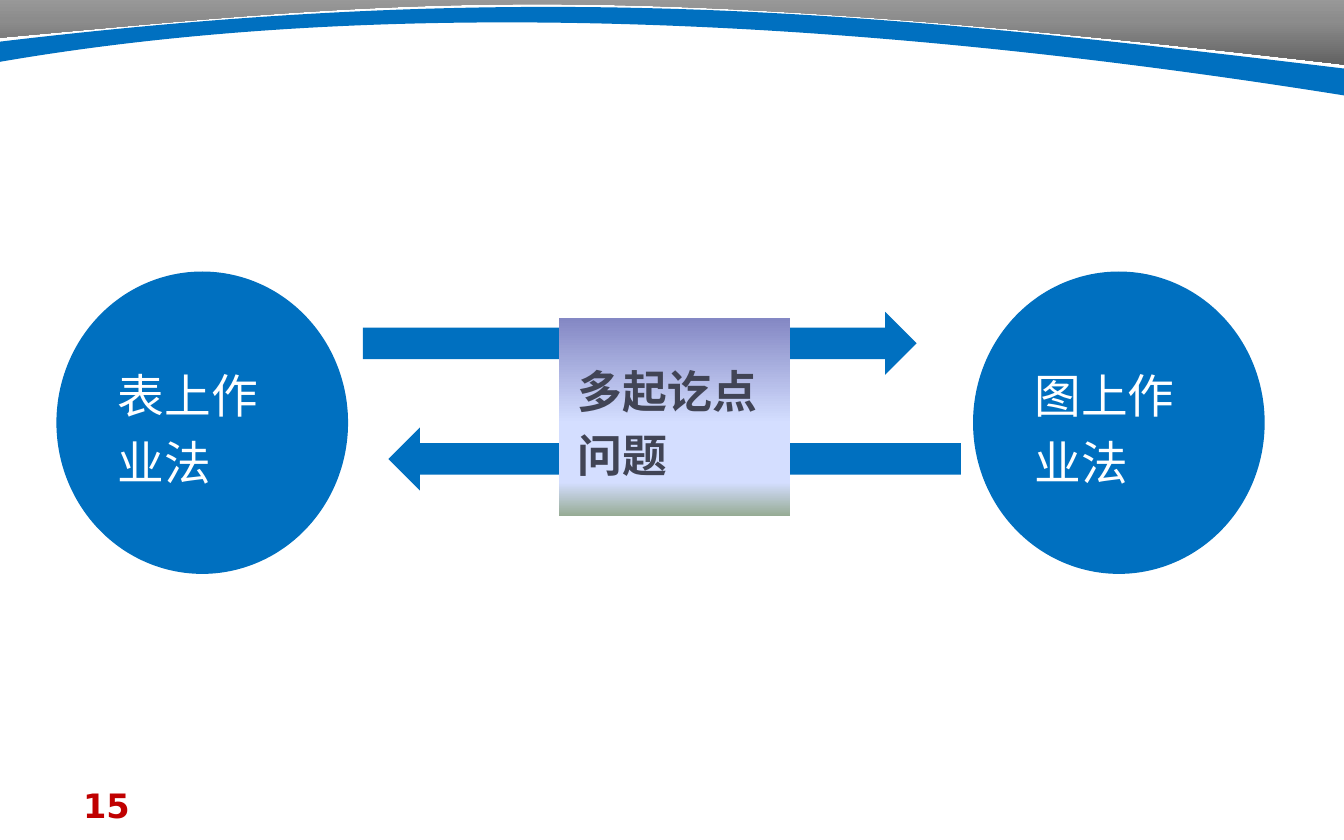
from lxml.etree import SubElement
from pptx import Presentation
from pptx.dml.color import RGBColor
from pptx.enum.shapes import MSO_SHAPE
from pptx.enum.text import MSO_ANCHOR, PP_ALIGN
from pptx.oxml.ns import qn
from pptx.util import Inches, Pt

BLUE = RGBColor(0x00, 0x70, 0xC0)
RED = RGBColor(0xC0, 0x00, 0x00)
WHITE = RGBColor(0xFF, 0xFF, 0xFF)
SLATE = RGBColor(0x41, 0x44, 0x55)
GREY_STOPS = [
    (0, RGBColor(0xA6, 0xA6, 0xA6)),
    (50, RGBColor(0x8C, 0x8C, 0x8C)),
    (100, RGBColor(0x62, 0x62, 0x62)),
]
PANEL_STOPS = [
    (0, RGBColor(0x84, 0x88, 0xC4)),
    (53, RGBColor(0xD4, 0xDE, 0xFF)),
    (83, RGBColor(0xD4, 0xDE, 0xFF)),
    (100, RGBColor(0x96, 0xAB, 0x94)),
]


class SlideBuilder:
    chinese_font = "Noto Sans CJK SC"
    number_font = "DejaVu Sans"

    def __init__(self, slide):
        self.slide = slide

    def paint(self, shape, fill):
        """Fill with one colour, or with (percent, colour) stops from top to bottom."""
        shape.shadow.inherit = False
        shape.line.fill.background()
        if isinstance(fill, RGBColor):
            shape.fill.solid()
            shape.fill.fore_color.rgb = fill
            return
        shape.fill.gradient()
        shape.fill.gradient_angle = 270
        stop_list = next(shape._element.spPr.iter(qn("a:gsLst")))
        for stop in list(stop_list):
            stop_list.remove(stop)
        for percent, colour in fill:
            stop = SubElement(stop_list, qn("a:gs"), pos=str(percent * 1000))
            SubElement(stop, qn("a:srgbClr"), val=str(colour))

    def style_text(self, paragraph, font_name, size, colour, bold=False):
        paragraph.alignment = PP_ALIGN.LEFT
        for run in paragraph.runs:
            font = run.font
            font.size, font.bold, font.name = Pt(size), bold, font_name
            font.color.rgb = colour
            SubElement(run._r.get_or_add_rPr(), qn("a:ea"), typeface=font_name)

    def shape(self, kind, left, top, width, height, fill):
        shape = self.slide.shapes.add_shape(
            kind, Inches(left), Inches(top), Inches(width), Inches(height))
        self.paint(shape, fill)
        return shape

    def label(self, shape, text, size, colour, bold=False):
        text_frame = shape.text_frame
        text_frame.word_wrap = True
        text_frame.vertical_anchor = MSO_ANCHOR.MIDDLE
        text_frame.margin_left = text_frame.margin_right = Inches(0.14)
        text_frame.margin_top = text_frame.margin_bottom = Inches(0.07)
        text_frame.text = text
        paragraph = text_frame.paragraphs[0]
        paragraph.line_spacing = 1.2
        self.style_text(paragraph, self.chinese_font, size, colour, bold)

    def band(self, points, curve_starts, fill):
        """Closed outline; three points from each curve start form a Bézier curve."""
        builder = self.slide.shapes.build_freeform(
            Inches(points[0][0]), Inches(points[0][1]))
        builder.add_line_segments(
            [(Inches(x), Inches(y)) for x, y in points[1:]], close=True)
        shape = builder.convert_to_shape()
        segments = list(shape._element.iter(qn("a:lnTo")))
        for start in curve_starts:
            lines = segments[start - 1:start + 2]
            outline = lines[0].getparent()
            curve = outline.makeelement(qn("a:cubicBezTo"))
            lines[0].addprevious(curve)
            for line in lines:
                curve.append(line[0])
                outline.remove(line)
        self.paint(shape, fill)

    def page_number(self, text, left, top, width, height):
        box = self.slide.shapes.add_textbox(
            Inches(left), Inches(top), Inches(width), Inches(height))
        box.text_frame.word_wrap = True
        box.text_frame.text = text
        self.style_text(
            box.text_frame.paragraphs[0], self.number_font, 18, RED, bold=True)


def main():
    presentation = Presentation()
    presentation.slide_width = Inches(10)
    presentation.slide_height = Inches(6.25)
    slide = presentation.slides.add_slide(presentation.slide_layouts[6])
    builder = SlideBuilder(slide)

    builder.page_number("15", 0.52, 5.79, 2.33, 0.33)
    builder.band(
        [(10, 0.48), (4.43, -0.17), (3.08, 0), (0, 0.28),
         (0, -0.02), (10, -0.02)],
        [1], GREY_STOPS)
    builder.band(
        [(0, 0.31), (4.03, -0.17), (6.52, 0.09), (10, 0.51),
         (10, 0.71), (6.05, 0.08), (2.67, 0), (0, 0.46)],
        [1, 5], BLUE)

    builder.shape(MSO_SHAPE.RIGHT_ARROW, 2.7, 2.32, 4.12, 0.47, BLUE)
    builder.shape(MSO_SHAPE.LEFT_ARROW, 2.89, 3.18, 4.26, 0.47, BLUE)
    for left, method in [(0.42, "表上作业法"), (7.24, "图上作业法")]:
        circle = builder.shape(MSO_SHAPE.OVAL, left, 2.02, 2.17, 2.25, BLUE)
        builder.label(circle, method, 25, WHITE)
    panel = builder.shape(
        MSO_SHAPE.RECTANGLE, 4.16, 2.37, 1.72, 1.47, PANEL_STOPS)
    builder.label(panel, "多起讫点问题", 24, SLATE, bold=True)

    presentation.save("out.pptx")


if __name__ == "__main__":
    main()
